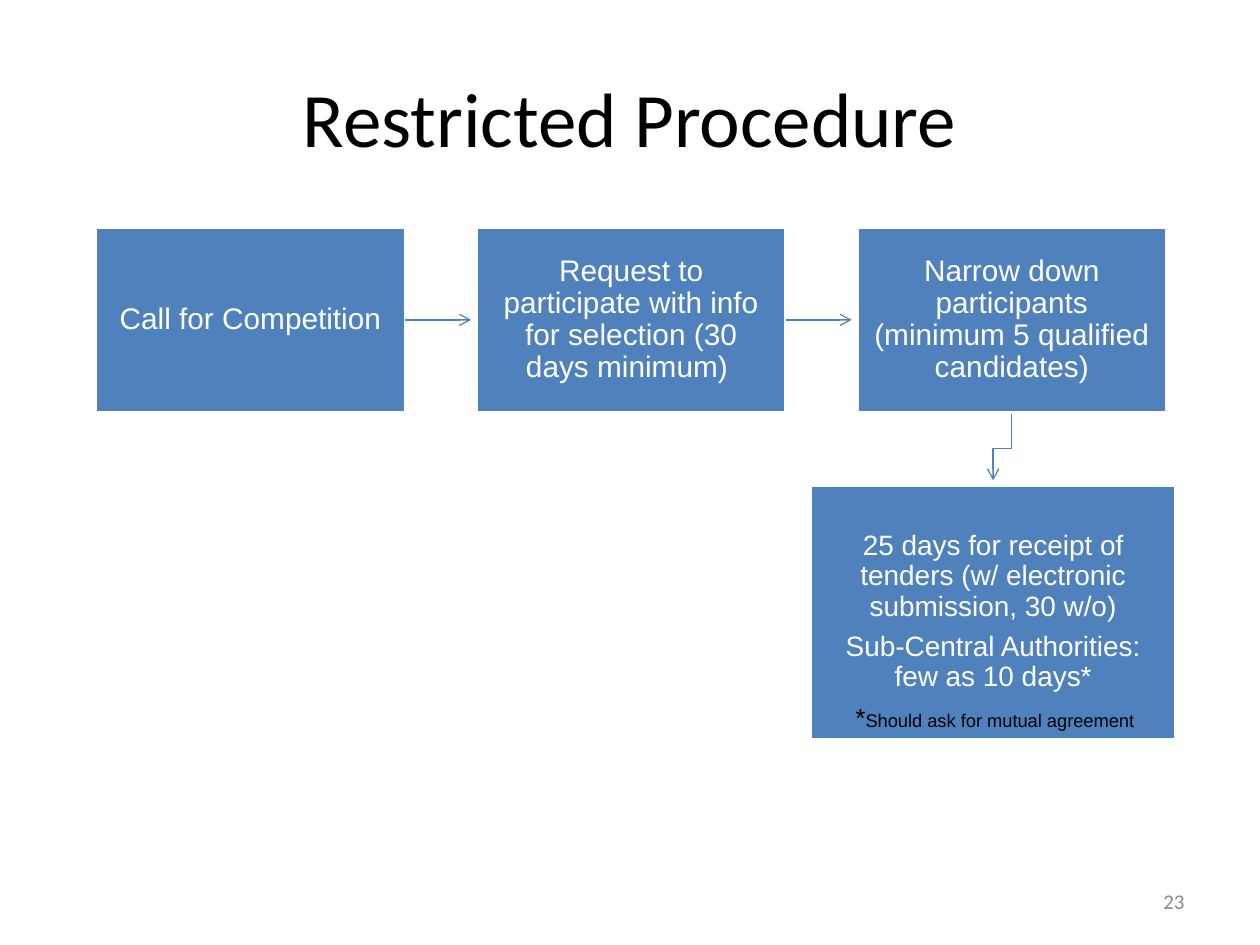
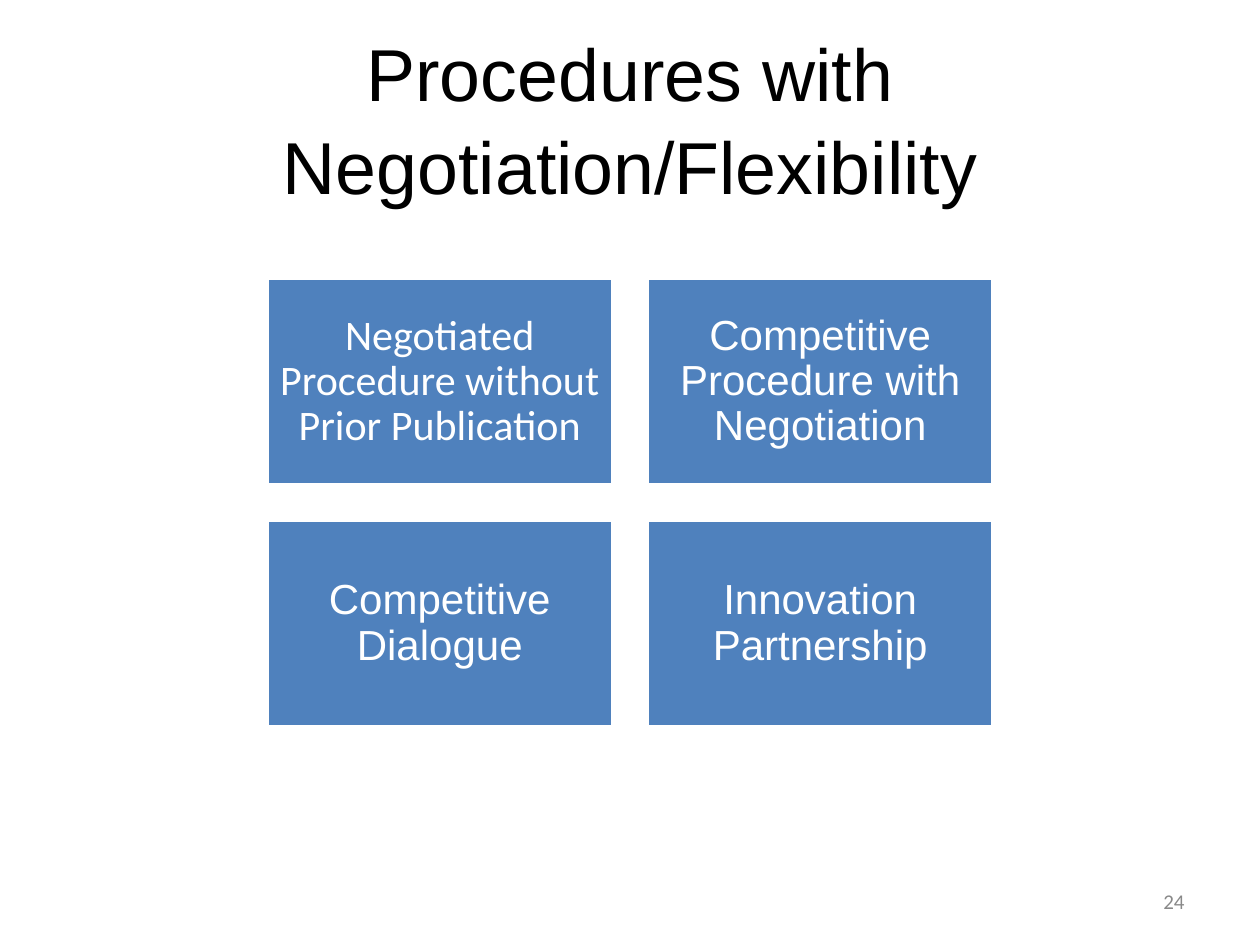
from lxml import etree
from pptx import Presentation
from pptx.dml.color import RGBColor
from pptx.enum import shapes, text
from pptx.oxml.ns import qn
from pptx.util import Pt

COLORS = {"ink": "000000", "box": "4F81BD", "white": "FFFFFF", "number": "898989"}
SLIDE_W, SLIDE_H = 720, 540


class Deck:
    def __init__(self):
        self.prs = Presentation()
        self.prs.slide_width, self.prs.slide_height = Pt(SLIDE_W), Pt(SLIDE_H)
        self.s = None

    def color(self, name):
        return RGBColor.from_string(COLORS[name])

    def new_slide(self, title, number, size, font, spacing=1.0):
        self.s = self.prs.slides.add_slide(self.prs.slide_layouts[5])
        sp = self.s.shapes.title
        sp.left, sp.top, sp.width, sp.height = Pt(36), Pt(21.6), Pt(648), Pt(90)
        tf = sp.text_frame
        tf.auto_size = text.MSO_AUTO_SIZE.NONE
        tf.vertical_anchor = text.MSO_ANCHOR.MIDDLE
        p = tf.paragraphs[0]
        p.alignment, p.line_spacing = text.PP_ALIGN.CENTER, spacing
        self.run(p, title, size, "ink", font)
        self.page_number(number)

    def run(self, p, words, size, color, font="Arial"):
        r = p.add_run()
        r.text = words
        r.font.size, r.font.name = Pt(size), font
        r.font.color.rgb = self.color(color)

    def textbox(self, left, top, width, height):
        tf = self.s.shapes.add_textbox(Pt(left), Pt(top), Pt(width), Pt(height)).text_frame
        tf.word_wrap = True
        return tf

    def page_number(self, number):
        tf = self.textbox(516, 500.5, 168, 28.75)
        tf.vertical_anchor = text.MSO_ANCHOR.MIDDLE
        p = tf.paragraphs[0]
        p.alignment = text.PP_ALIGN.RIGHT
        self.run(p, str(number), 12, "number", "Calibri")

    def box(self, left, top, width, height, paragraphs, size, inset, font="Arial"):
        sp = self.s.shapes.add_shape(
            shapes.MSO_SHAPE.RECTANGLE, Pt(left), Pt(top), Pt(width), Pt(height))
        sp.shadow.inherit = False
        sp.fill.solid()
        sp.fill.fore_color.rgb = self.color("box")
        sp.line.color.rgb = self.color("white")
        sp.line.width = Pt(2)
        tf = sp.text_frame
        tf.word_wrap = True
        tf.vertical_anchor = text.MSO_ANCHOR.MIDDLE
        tf.margin_left = tf.margin_right = tf.margin_top = tf.margin_bottom = Pt(inset)
        for i, words in enumerate(paragraphs):
            p = tf.add_paragraph() if i else tf.paragraphs[0]
            p.alignment, p.line_spacing = text.PP_ALIGN.CENTER, 0.9
            p.space_after = Pt(0.35 * size)
            self.run(p, words, size, "white", font)
        return sp

    def arrow_line(self, sp):
        sp.line.color.rgb = self.color("box")
        sp.line.width = Pt(0.75)
        etree.SubElement(sp.line._get_or_add_ln(), qn("a:tailEnd"), type="arrow")

    def arrow_from(self, start, length):
        x, y = start.left + start.width, start.top + start.height // 2
        cx = self.s.shapes.add_connector(
            shapes.MSO_CONNECTOR.STRAIGHT, x, y, x + Pt(length), y)
        cx.begin_connect(start, 3)
        self.arrow_line(cx)
        etree.SubElement(cx._element.spPr, qn("a:effectLst"))

    def bent_arrow(self, points):
        (x, y), *rest = [(Pt(a), Pt(b)) for a, b in points]
        fb = self.s.shapes.build_freeform(x, y)
        fb.add_line_segments(rest, close=False)
        sp = fb.convert_to_shape()
        sp.fill.background()
        self.arrow_line(sp)
        sp.shadow.inherit = False

    def footnote(self, left, top, width, height, runs):
        tf = self.textbox(left, top, width, height)
        tf.word_wrap = False
        tf.auto_size = text.MSO_AUTO_SIZE.SHAPE_TO_FIT_TEXT
        for words, size in runs:
            self.run(tf.paragraphs[0], words, size, "ink")


def restricted_procedure(deck):
    deck.new_slide("Restricted Procedure", 23, 44, "Calibri")
    steps = [
        "Call for Competition",
        "Request to participate with info for selection (30 days minimum) ",
        "Narrow down participants (minimum 5 qualified candidates)",
    ]
    left, top, width, height, pitch = 54.7, 129.8, 177, 106, 217.5
    boxes = [deck.box(left + i * pitch, top, width, height, [step], 17, 9.4)
             for i, step in enumerate(steps)]
    for sp in boxes[:-1]:
        deck.arrow_from(sp, 37.5)

    tender_left, tender_top, tender_width = 463, 277, 209
    from_x = left + 2 * pitch + width / 2
    to_x = tender_left + tender_width / 2
    deck.bent_arrow([(from_x, 236.5), (from_x, 256.3), (to_x, 256.3), (to_x, 274.5)])
    deck.box(tender_left, tender_top, tender_width, 145.5, [
        "25 days for receipt of tenders (w/ electronic submission, 30 w/o)",
        "Sub-Central Authorities: few as 10 days*",
    ], 16, 8.6)
    deck.footnote(481.7, 397.4, 177, 25.2,
                  [("*", 15), ("Should ask for mutual agreement", 10.5)])


def negotiation_procedures(deck):
    deck.new_slide("Procedures with Negotiation/Flexibility", 24, 42, "Arial", 1.05)
    procedures = [
        ("Negotiated Procedure without Prior Publication", "Calibri"),
        ("Competitive Procedure with Negotiation", "Arial"),
        ("Competitive Dialogue", "Arial"),
        ("Innovation Partnership", "Arial"),
    ]
    width, height, gap, top = 197.3, 118.1, 20.1, 159.2
    left = (SLIDE_W - 2 * width - gap) / 2
    for i, (name, font) in enumerate(procedures):
        row, col = divmod(i, 2)
        deck.box(left + col * (width + gap), top + row * (height + gap),
                 width, height, [name], 24, 7.2, font)


def main():
    deck = Deck()
    restricted_procedure(deck)
    negotiation_procedures(deck)
    deck.prs.save("out.pptx")


if __name__ == "__main__":
    main()
